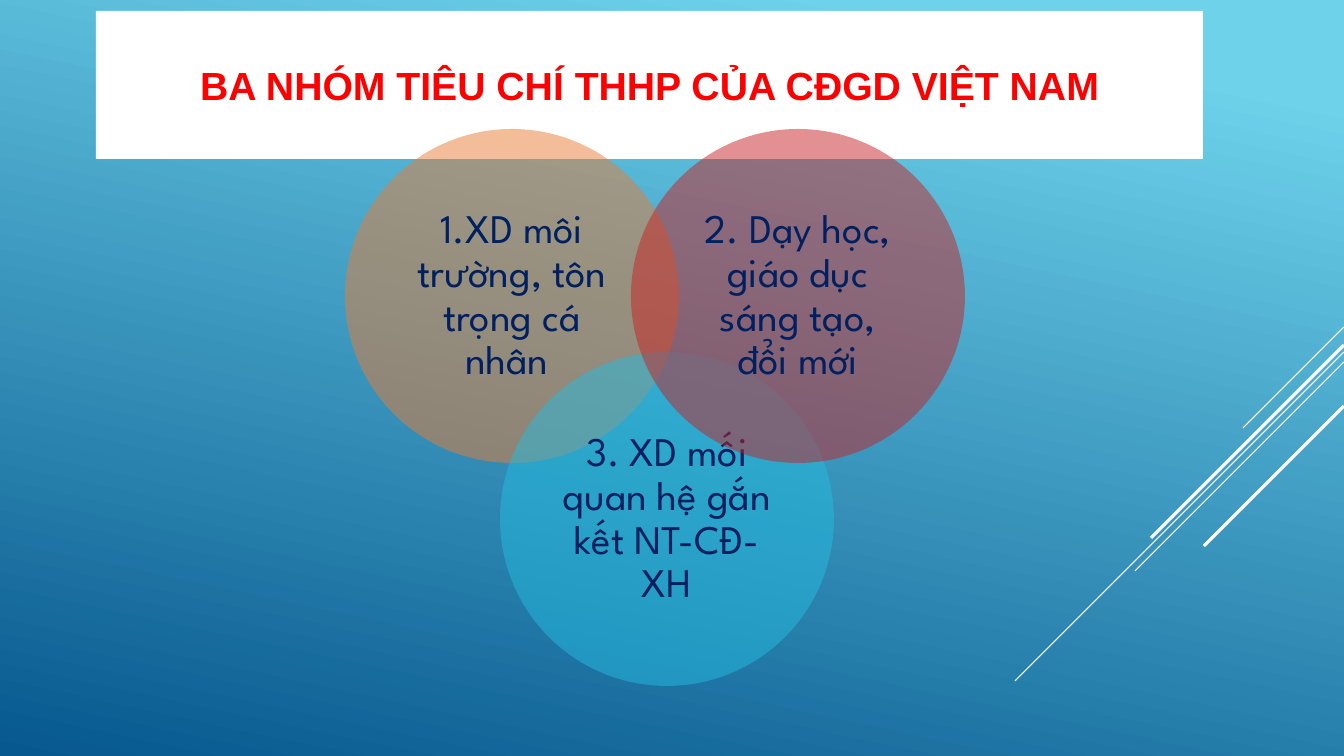
from lxml import etree
from pptx import Presentation
from pptx.dml.color import RGBColor
from pptx.enum.shapes import MSO_CONNECTOR, MSO_SHAPE
from pptx.enum.text import MSO_ANCHOR, MSO_AUTO_SIZE, PP_ALIGN
from pptx.oxml.ns import qn
from pptx.util import Emu, Pt

STRAIGHT = MSO_CONNECTOR.STRAIGHT
OVAL = MSO_SHAPE.OVAL
MIDDLE = MSO_ANCHOR.MIDDLE
NO_AUTOFIT = MSO_AUTO_SIZE.NONE
CENTER = PP_ALIGN.CENTER

WIDTH, HEIGHT = 1344, 756
DIAMETER = 334
UPPER_ROW, LOWER_ROW = 129, 352

# Height at the right edge, horizontal run, weight in points
DIAGONALS = [
    (327, 101, 0.75),
    (352, 329, 0.75),
    (362, 209, 0.75),
    (345, 193, 2.25),
    (406, 140, 2.25),
]

CRITERIA = [
    (345, UPPER_ROW, "E87D37", "1.XD môi trường, tôn trọng cá nhân "),
    (500, LOWER_ROW, "25BBDF", "3. XD mối quan hệ gắn kết NT-CĐ-XH"),
    (631, UPPER_ROW, "C62324", "2. Dạy học, giáo dục sáng tạo, đổi mới"),
]


def px(n):
    return Emu(round(n * 914400 / 100.8))


def rgb(code):
    return RGBColor.from_string(code)


class SlideBuilder:
    """Holds the fonts, the colours and the current slide."""

    title_font, label_font = "Arial", "League Spartan"
    title_color, label_color = "FF0000", "002060"
    white = "FFFFFF"

    def __init__(self, slide):
        self.slide = slide

    def background(self, start, end, clockwise):
        fill = self.slide.background.fill
        fill.gradient()
        fill.gradient_angle = 360 - clockwise
        for stop, (position, code) in zip(fill.gradient_stops, (start, end)):
            stop.position = position
            stop.color.rgb = rgb(code)

    def diagonal(self, y, run, weight):
        """Draw a 45° line down and left from the right edge."""
        line = self.slide.shapes.add_connector(
            STRAIGHT, px(WIDTH), px(y), px(WIDTH - run), px(y + run))
        line.line.color.rgb = rgb(self.white)
        line.line.width = Pt(weight)
        etree.SubElement(line._element.spPr, qn("a:effectLst"))

    def set_text(self, sp, text, font, size, color, bold=False):
        tf = sp.text_frame
        tf.text = text
        tf.word_wrap = True
        tf.auto_size = NO_AUTOFIT
        tf.vertical_anchor = MIDDLE
        p = tf.paragraphs[0]
        p.alignment = CENTER
        p.font.name = font
        p.font.size = Pt(size)
        p.font.bold = bold
        p.font.color.rgb = rgb(color)
        return tf

    def title(self, x, y, w, h, text):
        sp = self.slide.shapes.title
        sp.left, sp.top, sp.width, sp.height = map(px, (x, y, w, h))
        sp.fill.solid()
        sp.fill.fore_color.rgb = rgb(self.white)
        self.set_text(sp, text, self.title_font, 28, self.title_color, bold=True)

    def circle(self, x, y, color, text):
        sp = self.slide.shapes.add_shape(
            OVAL, px(x), px(y), px(DIAMETER), px(DIAMETER))
        sp.shadow.inherit = False
        sp.line.fill.background()
        sp.fill.solid()
        sp.fill.fore_color.rgb = rgb(color)
        srgb = sp._element.spPr.find(".//" + qn("a:srgbClr"))
        etree.SubElement(srgb, qn("a:alpha"), val="50000")
        tf = self.set_text(sp, text, self.label_font, 29, self.label_color)
        tf.margin_left = tf.margin_right = px(12)
        tf.margin_top = tf.margin_bottom = px(12)
        tf.paragraphs[0].line_spacing = 0.9


def main():
    prs = Presentation()
    prs.slide_width, prs.slide_height = px(WIDTH), px(HEIGHT)
    s = SlideBuilder(prs.slides.add_slide(prs.slide_layouts[5]))
    s.background((0.1, "6ED2EB"), (1, "06588E"), 102)
    for diagonal in DIAGONALS:
        s.diagonal(*diagonal)
    s.title(96, 11, 1107, 148, "BA NHÓM TIÊU CHÍ THHP CỦA CĐGD VIỆT NAM")
    for criterion in CRITERIA:
        s.circle(*criterion)
    prs.save("out.pptx")


if __name__ == "__main__":
    main()
